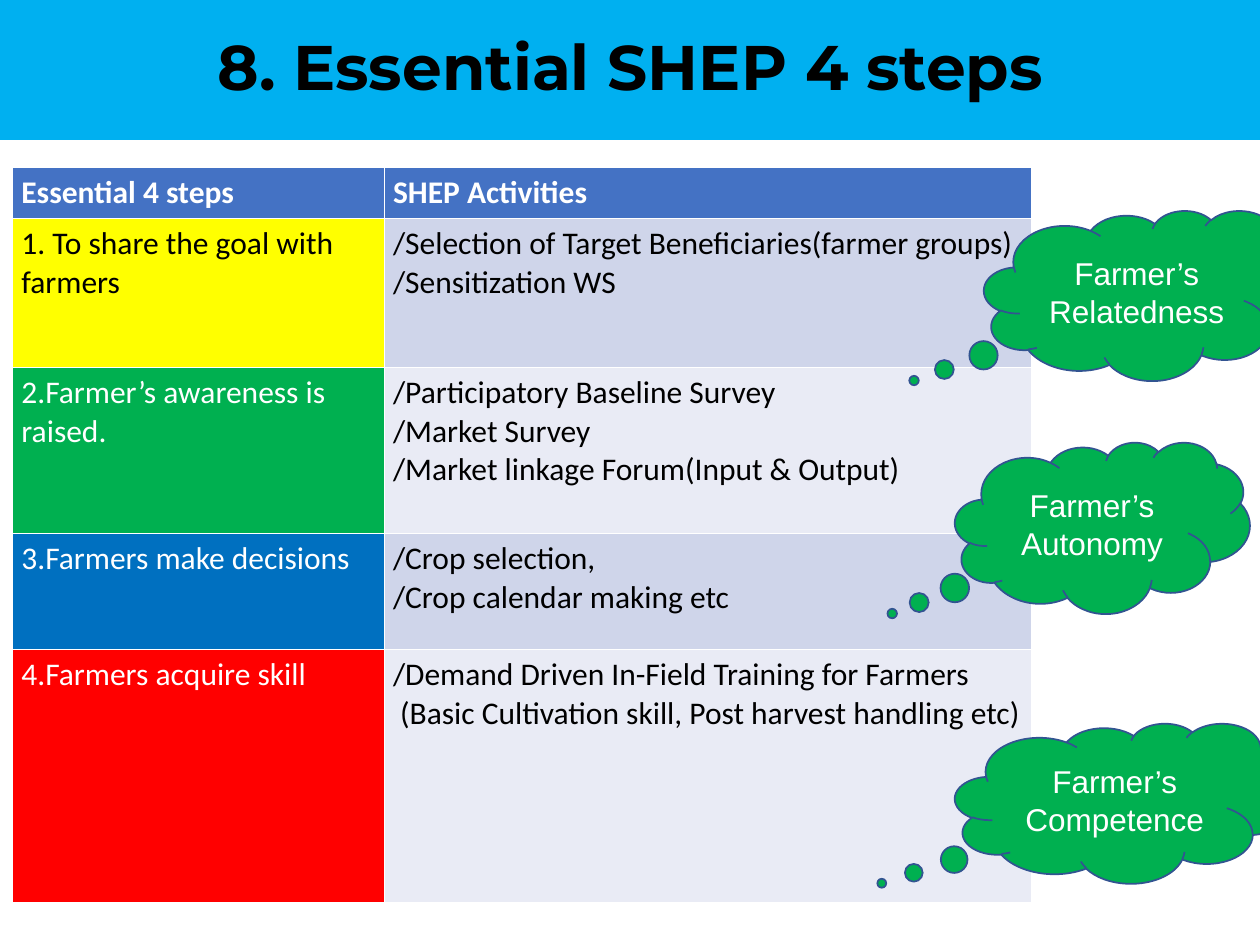
from pptx import Presentation
from pptx.dml.color import RGBColor
from pptx.enum.shapes import MSO_SHAPE as Shape
from pptx.enum.text import MSO_ANCHOR as Anchor, MSO_AUTO_SIZE as AutoSize, PP_ALIGN as Align
from pptx.util import Inches, Pt

BLACK, WHITE, GREEN = "000000", "FFFFFF", "00B050"
BODY_FILLS = ["CFD5EA", "E9EBF5"]


def paint(fill, color):
    fill.solid()
    fill.fore_color.rgb = RGBColor.from_string(color)


def write(frame, lines, color, paragraph_format, **font_format):
    """Put one paragraph per line in the frame, all in the same format."""
    frame.text = "\n".join(lines)
    for paragraph in frame.paragraphs:
        for name, value in paragraph_format.items():
            setattr(paragraph, name, value)
        font = paragraph.runs[0].font
        for name, value in font_format.items():
            setattr(font, name, value)
        paint(font.fill, color)


presentation = Presentation()
presentation.slide_width, presentation.slide_height = Inches(10), Inches(7.5)
slide = presentation.slides.add_slide(presentation.slide_layouts[5])

# Title band
title = slide.shapes.title
title.left, title.top = 0, 0
title.width, title.height = presentation.slide_width, Inches(1.11)
paint(title.fill, "00B0F0")
write(title.text_frame, ["8. Essential SHEP 4 steps"], BLACK,
      {"alignment": Align.CENTER, "line_spacing": 0.9},
      name="Montserrat", size=Pt(36), bold=True)
title.text_frame.vertical_anchor = Anchor.MIDDLE
title.text_frame.auto_size = AutoSize.NONE

# Table of steps and activities
columns = [2.95, 5.14]
rows = [0.4, 1.18, 1.32, 0.92, 2.01]
steps = [
    ("1. To share the goal with farmers", "FFFF00", BLACK,
     ["/Selection of Target Beneficiaries(farmer groups)", "/Sensitization WS"]),
    ("2.Farmer’s awareness is raised.", GREEN, WHITE,
     ["/Participatory Baseline Survey", "/Market Survey",
      "/Market linkage Forum(Input & Output)"]),
    ("3.Farmers make decisions", "0070C0", WHITE,
     ["/Crop selection,", "/Crop calendar making etc"]),
    ("4.Farmers acquire skill", "FF0000", WHITE,
     ["/Demand Driven In-Field Training for Farmers",
      " (Basic Cultivation skill, Post harvest handling etc)"]),
]
# Each cell: lines, fill, text colour
grid = [[([heading], "4472C4", WHITE) for heading in ("Essential 4 steps", "SHEP Activities")]]
for index, (step, fill, color, activities) in enumerate(steps):
    grid.append([([step], fill, color), (activities, BODY_FILLS[index % 2], BLACK)])

table = slide.shapes.add_table(len(rows), len(columns), Inches(0.1), Inches(1.33),
                               Inches(sum(columns)), Inches(sum(rows))).table
for column, width in zip(table.columns, columns):
    column.width = Inches(width)
for row, height in zip(table.rows, rows):
    row.height = Inches(height)
margins = {"margin_left": 0.07, "margin_right": 0.07, "margin_top": 0.05, "margin_bottom": 0.05}
for row_index, row_cells in enumerate(grid):
    for column_index, (lines, fill, color) in enumerate(row_cells):
        cell = table.cell(row_index, column_index)
        for name, value in margins.items():
            setattr(cell, name, Inches(value))
        paint(cell.fill, fill)
        write(cell.text_frame, lines, color, {}, name="Calibri", size=Pt(18),
              bold=row_index == 0)

# Thought clouds for the farmer's needs
clouds = [
    ("Farmer’s Relatedness", 7.81, 1.67, 2.61, 1.35),
    ("Farmer’s Autonomy", 7.58, 3.51, 2.34, 1.36),
    ("Farmer’s Competence", 7.58, 5.74, 2.73, 1.27),
]
for need, *box in clouds:
    cloud = slide.shapes.add_shape(Shape.CLOUD_CALLOUT, *map(Inches, box))
    cloud.shadow.inherit = False
    cloud.adjustments[0], cloud.adjustments[1] = -0.713, 0.5
    paint(cloud.fill, GREEN)
    paint(cloud.line.fill, "325491")
    cloud.line.width = Pt(1)
    write(cloud.text_frame, [need], WHITE, {"alignment": Align.CENTER},
          name="Arial", size=Pt(18))
    cloud.text_frame.vertical_anchor = Anchor.MIDDLE
    cloud.text_frame.word_wrap = True

presentation.save("out.pptx")
